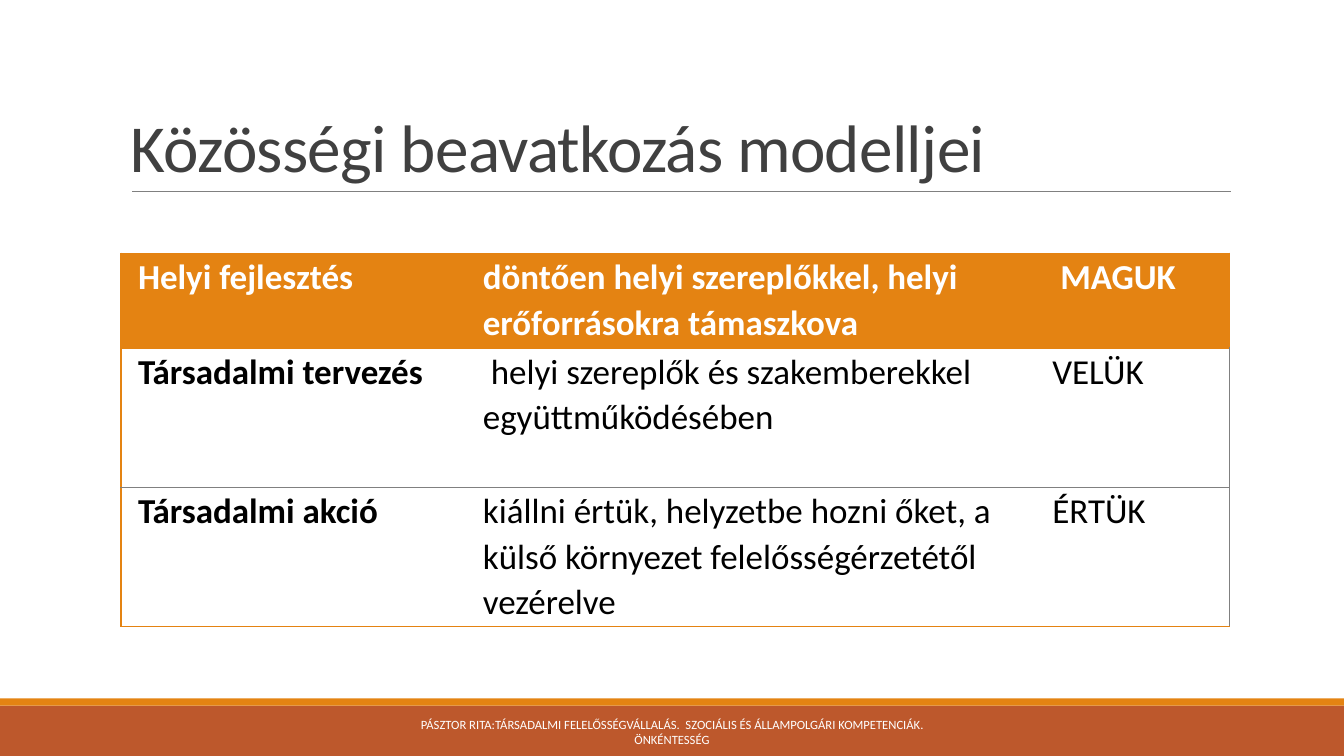
from lxml.etree import SubElement
from pptx import Presentation
from pptx.dml.color import RGBColor
from pptx.enum.shapes import MSO_CONNECTOR, MSO_SHAPE
from pptx.enum.text import MSO_ANCHOR, PP_ALIGN
from pptx.oxml.ns import qn
from pptx.util import Cm, Pt

TITLE = "Közösségi beavatkozás modelljei"
MODELS = [
    ("Helyi fejlesztés", "döntően helyi szereplőkkel, helyi erőforrásokra támaszkova", " MAGUK"),
    ("Társadalmi tervezés", " helyi szereplők és szakemberekkel együttműködésében", "VELÜK"),
    ("Társadalmi akció",
     "kiállni értük, helyzetbe hozni őket, a külső környezet felelősségérzetétől vezérelve",
     "ÉRTÜK"),
]
FOOTER = ("PÁSZTOR RITA:TÁRSADALMI FELELŐSSÉGVÁLLALÁS.  "
          "SZOCIÁLIS ÉS ÁLLAMPOLGÁRI KOMPETENCIÁK. ÖNKÉNTESSÉG")

COLORS = {"orange": "E48312", "rust": "BD582C", "grey": "808080",
          "title": "404040", "white": "FFFFFF", "black": "000000"}
FONT = "Calibri"
WIDTH, HEIGHT = 33.87, 19.05
LEFT, CONTENT_WIDTH = 3.05, 27.94
COLUMNS = (8.69, 14.35, 4.9)
ROWS = (2.39, 3.51, 3.51)
BANDS = [(17.78, 1.27, "rust"), (17.6, 0.18, "orange")]


def color(name):
    return RGBColor.from_string(COLORS[name])


def write(frame, text, size, color_name, bold=False, spacing=None, align=None):
    frame.word_wrap = True
    para = frame.paragraphs[0]
    para.line_spacing = spacing
    para.alignment = align
    span = para.add_run()
    span.text = text
    span.font.name = FONT
    span.font.size = Pt(size)
    span.font.bold = bold
    span.font.color.rgb = color(color_name)
    return span


def add_text(page, box, anchor, *content, **style):
    frame = page.shapes.add_textbox(*map(Cm, box)).text_frame
    frame.vertical_anchor = anchor
    return write(frame, *content, **style)


def add_band(page, top, height, color_name):
    band = page.shapes.add_shape(MSO_SHAPE.RECTANGLE, 0, Cm(top), Cm(WIDTH), Cm(height))
    band.shadow.inherit = False
    band.fill.solid()
    band.fill.fore_color.rgb = color(color_name)
    band.line.fill.background()


def add_title_rule(page):
    rule = page.shapes.add_connector(MSO_CONNECTOR.STRAIGHT, Cm(3.33), Cm(4.83), Cm(31.01), Cm(4.83))
    rule.line.color.rgb = color("grey")
    rule.line.width = Pt(0.5)
    SubElement(rule._element.spPr, qn("a:effectLst"))


def set_borders(cell, borders):
    """Draw the sides named in borders as (colour, points) and clear the others."""
    properties = cell._tc.get_or_add_tcPr()
    for side in "LRTB":
        line = SubElement(properties, qn(f"a:ln{side}"))
        if side in borders:
            color_name, points = borders[side]
            line.set("w", str(Pt(points)))
            fill = SubElement(line, qn("a:solidFill"))
            SubElement(fill, qn("a:srgbClr")).set("val", COLORS[color_name])
        else:
            line.set("w", "0")
            SubElement(line, qn("a:noFill"))


def cell_borders(row, column):
    strong, thin = ("orange", 1), ("grey", 0.5)
    last_row, last_column = len(ROWS) - 1, len(COLUMNS) - 1
    borders = {"B": strong if row in (0, last_row) else thin}
    if row < 2:
        borders["T"] = strong
    else:
        borders["T"] = thin
    if column == 0:
        borders["L"] = strong
    if column == last_column:
        borders["R"] = strong if row == 0 else thin
    return borders


def add_models(page):
    table = page.shapes.add_table(len(ROWS), len(COLUMNS), Cm(LEFT), Cm(6.38),
                                  Cm(CONTENT_WIDTH), Cm(sum(ROWS))).table
    for column, width in zip(table.columns, COLUMNS):
        column.width = Cm(width)
    for row, height in zip(table.rows, ROWS):
        row.height = Cm(height)
    for r, model in enumerate(MODELS):
        for c, text in enumerate(model):
            cell = table.cell(r, c)
            header = r == 0
            cell.margin_left = cell.margin_right = Cm(0.43)
            cell.margin_top = cell.margin_bottom = 0
            set_borders(cell, cell_borders(r, c))
            cell.fill.solid()
            cell.fill.fore_color.rgb = color("orange" if header else "white")
            write(cell.text_frame, text, 25, "white" if header else "black",
                  bold=header or c == 0, spacing=1.07)


def main():
    deck = Presentation()
    deck.slide_width, deck.slide_height = Cm(WIDTH), Cm(HEIGHT)
    page = deck.slides.add_slide(deck.slide_layouts[6])
    for band in BANDS:
        add_band(page, *band)
    add_title_rule(page)
    title = add_text(page, (LEFT, 0.79, CONTENT_WIDTH, 4.04), MSO_ANCHOR.BOTTOM,
                     TITLE, 48, "title", spacing=0.85)
    title.font._element.set("spc", "-50")
    add_models(page)
    add_text(page, (10.24, 17.93, 13.39, 1.02), MSO_ANCHOR.MIDDLE,
             FOOTER, 9, "white", align=PP_ALIGN.CENTER)
    deck.save("out.pptx")


if __name__ == "__main__":
    main()
